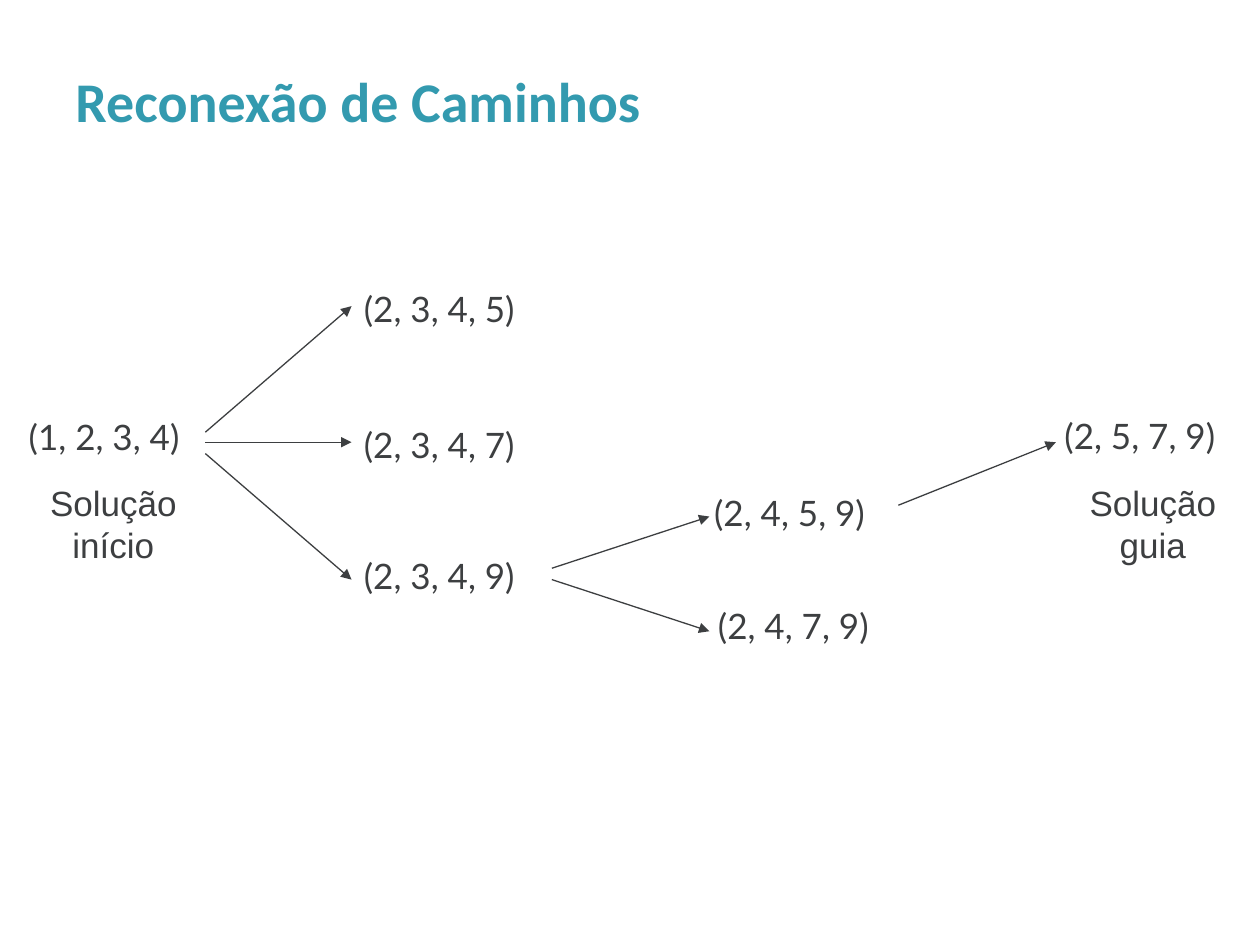
from dataclasses import dataclass

from lxml import etree
from pptx import Presentation
from pptx import util as u
from pptx.dml.color import RGBColor
from pptx.enum import shapes, text
from pptx.oxml import ns

HUES = {"title": "339AAF", "ink": "3D3F41"}


@dataclass
class Label:
    left: float
    top: float
    wide: float
    high: float
    lines: tuple[str, ...]
    font: str = "Lato"
    size: int = 20
    hue: str = "ink"
    bold: bool = False
    wrap: bool = False
    grow: bool = True
    align: text.PP_ALIGN = text.PP_ALIGN.LEFT
    anchor: text.MSO_ANCHOR = text.MSO_ANCHOR.TOP
    pitch: float = 1.0


@dataclass
class Arrow:
    x: float
    y: float
    to_x: float
    to_y: float


def node(left: float, top: float, name: str) -> Label:
    return Label(left, top, 1.53, 0.43, (name,))


def note(left: float, *lines: str) -> Label:
    return Label(left, 3.77, 1.28, 0.77, lines, font="Arial", wrap=True,
                 align=text.PP_ALIGN.CENTER)


def draw_label(slide, item: Label) -> None:
    box = slide.shapes.add_textbox(
        *map(u.Inches, (item.left, item.top, item.wide, item.high)))
    frame = box.text_frame
    frame.word_wrap = item.wrap
    frame.vertical_anchor = item.anchor
    if item.grow:
        frame.auto_size = text.MSO_AUTO_SIZE.SHAPE_TO_FIT_TEXT
    for i, line in enumerate(item.lines):
        para = frame.add_paragraph() if i else frame.paragraphs[0]
        para.alignment = item.align
        para.line_spacing = item.pitch
        run = para.add_run()
        run.text = line
        run.font.name = item.font
        run.font.size = u.Pt(item.size)
        run.font.bold = item.bold
        run.font.color.rgb = RGBColor.from_string(HUES[item.hue])


def draw_arrow(slide, item: Arrow) -> None:
    link = slide.shapes.add_connector(
        shapes.MSO_CONNECTOR.STRAIGHT,
        *map(u.Inches, (item.x, item.y, item.to_x, item.to_y)))
    link.line.width = u.Pt(0.75)
    link.line.color.rgb = RGBColor.from_string(HUES["ink"])
    tip = etree.SubElement(link.line._get_or_add_ln(), ns.qn("a:tailEnd"))
    tip.set("type", "triangle")
    etree.SubElement(link._element.spPr, ns.qn("a:effectLst"))


LABELS = [
    Label(0.5, 0.35, 9.05, 0.77, ("Reconexão de Caminhos",), font="Calibri",
          size=32, hue="title", bold=True, wrap=True, grow=False,
          anchor=text.MSO_ANCHOR.BOTTOM, pitch=0.9),
    node(0.13, 3.25, "(1, 2, 3, 4)"),
    node(8.35, 3.24, "(2, 5, 7, 9)"),
    node(2.79, 4.35, "(2, 3, 4, 9)"),
    node(2.79, 3.31, "(2, 3, 4, 7)"),
    node(2.79, 2.23, "(2, 3, 4, 5)"),
    node(5.57, 3.85, "(2, 4, 5, 9)"),
    node(5.6, 4.75, "(2, 4, 7, 9)"),
    note(0.26, "Solução", "início"),
    note(8.51, "Solução", "guia"),
]

ARROWS = [
    Arrow(1.63, 3.51, 2.79, 3.51),
    Arrow(1.63, 3.43, 2.79, 2.43),
    Arrow(1.63, 3.6, 2.79, 4.6),
    Arrow(4.38, 4.51, 5.63, 4.1),
    Arrow(4.38, 4.6, 5.63, 5.01),
    Arrow(7.13, 4.01, 8.38, 3.51),
]


def main() -> None:
    deck = Presentation()
    deck.slide_width, deck.slide_height = u.Inches(10), u.Inches(7.5)
    slide = deck.slides.add_slide(deck.slide_layouts[6])
    for item in LABELS:
        draw_label(slide, item)
    for item in ARROWS:
        draw_arrow(slide, item)
    deck.save("out.pptx")


if __name__ == "__main__":
    main()
